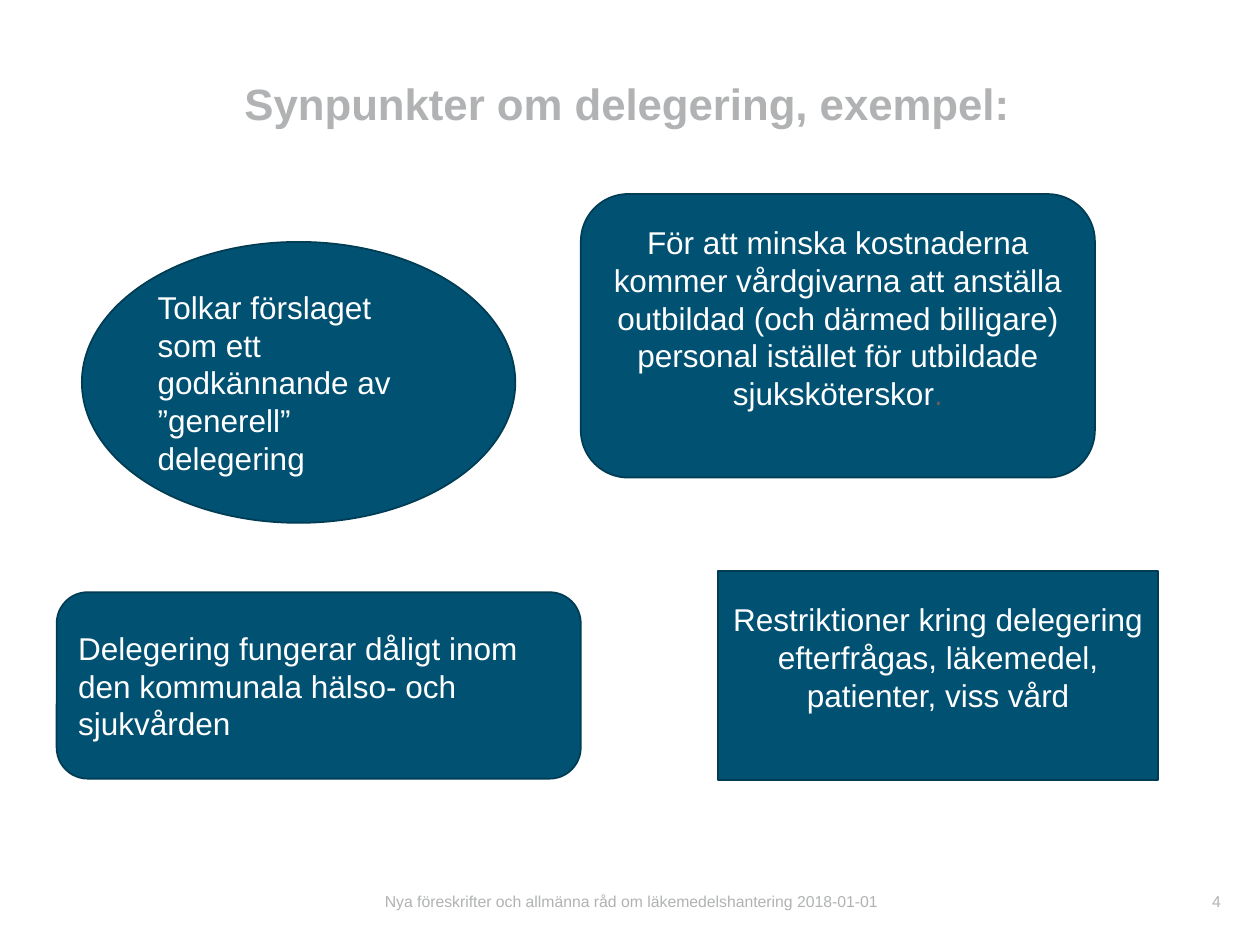
from pptx import Presentation
from pptx.dml.color import RGBColor
from pptx.enum.shapes import MSO_SHAPE
from pptx.enum.text import MSO_ANCHOR, MSO_AUTO_SIZE, PP_ALIGN
from pptx.util import Inches, Pt

ELLIPSE, RECTANGLE, ROUNDED = MSO_SHAPE.OVAL, MSO_SHAPE.RECTANGLE, MSO_SHAPE.ROUNDED_RECTANGLE
TOP, MIDDLE = MSO_ANCHOR.TOP, MSO_ANCHOR.MIDDLE
LEFT, CENTER, RIGHT = PP_ALIGN.LEFT, PP_ALIGN.CENTER, PP_ALIGN.RIGHT
NO_AUTOFIT = MSO_AUTO_SIZE.NONE

TITLE_ONLY = 5
COLUMNS, ROWS = 100, 75
ONE_EMPTY_LINE = 0.29


def color(hex_string):
    return RGBColor.from_string(hex_string)


class SlideBuilder:
    """Holds the style and the current slide; areas are (column, row, columns, rows)."""

    font_name = "Arial"
    grey, dark_grey, white = "B0B2B3", "606060", "FFFFFF"
    fill, outline = "005172", "003C54"

    def __init__(self, presentation):
        self.cell_width = presentation.slide_width / COLUMNS
        self.cell_height = presentation.slide_height / ROWS
        self.slide = presentation.slides.add_slide(presentation.slide_layouts[TITLE_ONLY])

    def box(self, area):
        """Turn a grid area into left, top, width and height."""
        steps = (self.cell_width, self.cell_height) * 2
        return [round(count * step) for count, step in zip(area, steps)]

    def set_text(self, shape, text, size, hex_string, alignment, anchor, side_inset=0.0):
        frame = shape.text_frame
        frame.word_wrap = True
        frame.auto_size = NO_AUTOFIT
        frame.vertical_anchor = anchor
        frame.margin_left = frame.margin_right = Inches(side_inset)
        frame.margin_top = frame.margin_bottom = Inches(0.05)
        paragraph = frame.paragraphs[0]
        paragraph.alignment = alignment
        paragraph.add_run().text = text
        paragraph.font.name = self.font_name
        paragraph.font.size = Pt(size)
        paragraph.font.color.rgb = color(hex_string)
        return paragraph

    def title(self, text, area):
        shape = self.slide.shapes.title
        shape.left, shape.top, shape.width, shape.height = self.box(area)
        paragraph = self.set_text(shape, text, 25, self.grey, LEFT, TOP)
        paragraph.font.bold = True
        paragraph.line_spacing = Pt(27)

    def footer(self, text, area, alignment):
        shape = self.slide.shapes.add_textbox(*self.box(area))
        self.set_text(shape, text, 9, self.grey, alignment, MIDDLE)

    def opinion(self, preset, text, area, alignment=LEFT, raised=0.0, ending=""):
        """Add a filled shape; raised lifts the text, ending is a darker last run."""
        shape = self.slide.shapes.add_shape(preset, *self.box(area))
        shape.shadow.inherit = False
        shape.fill.solid()
        shape.fill.fore_color.rgb = color(self.fill)
        shape.line.color.rgb = color(self.outline)
        shape.line.width = Pt(1)
        paragraph = self.set_text(shape, text, 18, self.white, alignment, MIDDLE, 0.1)
        shape.text_frame.margin_bottom += Inches(raised)
        if ending:
            run = paragraph.add_run()
            run.text = ending
            run.font.color.rgb = color(self.dark_grey)


def main():
    presentation = Presentation()
    presentation.slide_width, presentation.slide_height = Inches(10), Inches(7.5)
    builder = SlideBuilder(presentation)

    builder.title("Synpunkter om delegering, exempel:", (19.4, 6, 77.5, 8.7))
    builder.footer("Nya föreskrifter och allmänna råd om läkemedelshantering 2018-01-01",
                   (28.9, 69.5, 42.4, 4), CENTER)
    builder.footer("4", (74.4, 69.5, 22.5, 4), RIGHT)

    builder.opinion(ROUNDED, "Delegering fungerar dåligt inom den kommunala hälso- och sjukvården",
                    (4.5, 47, 41.6, 14.8))
    builder.opinion(ELLIPSE, "Tolkar förslaget som ett godkännande av ”generell” delegering",
                    (6.5, 19.2, 34.4, 22.3))
    builder.opinion(RECTANGLE,
                    "Restriktioner kring delegering efterfrågas, läkemedel, patienter, viss vård",
                    (57, 45.3, 34.9, 16.6), CENTER, ONE_EMPTY_LINE)
    builder.opinion(ROUNDED,
                    "För att minska kostnaderna kommer vårdgivarna att anställa outbildad "
                    "(och därmed billigare) personal istället för utbildade sjuksköterskor",
                    (46.1, 15.4, 40.8, 22.5), CENTER, ONE_EMPTY_LINE, ending=".")

    presentation.save("out.pptx")


if __name__ == "__main__":
    main()
